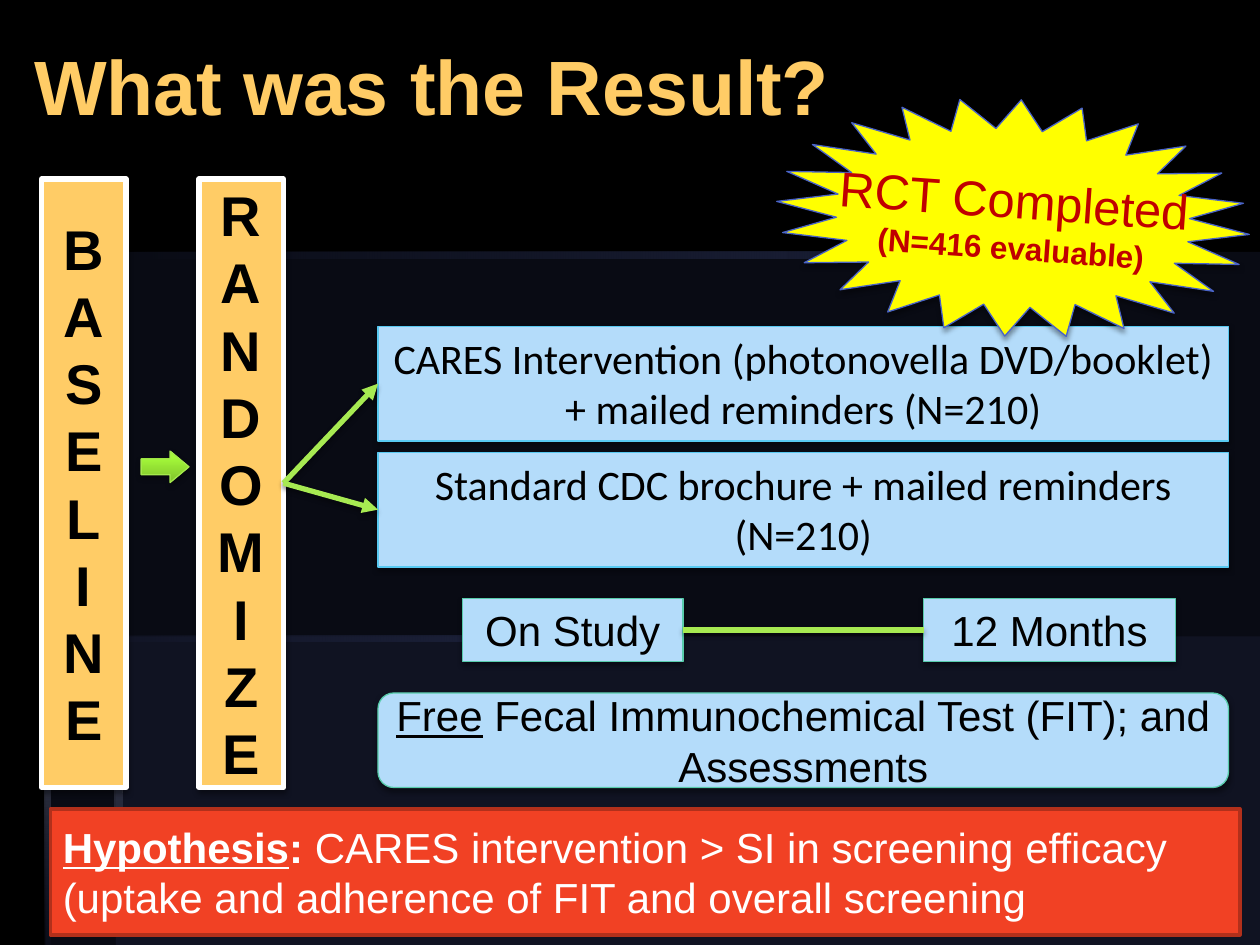
import pptx
import pptx.util
import pptx.dml.color
import pptx.enum.shapes
import pptx.enum.text
import pptx.oxml
import pptx.oxml.ns
from lxml import etree

Inches, Pt = pptx.util.Inches, pptx.util.Pt
Kind = pptx.enum.shapes.MSO_SHAPE
Align, Anchor = pptx.enum.text.PP_ALIGN, pptx.enum.text.MSO_ANCHOR
qn = pptx.oxml.ns.qn

GOLD, PALE, LIME, NAVY = "FFCC66", "B4DCFA", "A7EA52", "212745"
MINT, SKY, BLACK, WHITE = "58CCAC", "58C9F1", "000000", "FFFFFF"


def tint(fill, shade):
    fill.solid()
    fill.fore_color.rgb = pptx.dml.color.RGBColor.from_string(shade)


def box(kind, at, fill, edge, width, paras, size=24, ink=BLACK, font="Arial", bold=False):
    """Add a filled shape; each paragraph is a list of run texts."""
    shape = shapes.add_shape(kind, *map(Inches, at))
    shape.shadow.inherit = False
    tint(shape.fill, fill)
    tint(shape.line.fill, edge)
    shape.line.width = Pt(width)
    frame = shape.text_frame
    frame.word_wrap = True
    frame.vertical_anchor = Anchor.MIDDLE
    for i, texts in enumerate(paras):
        para = frame.paragraphs[0] if i == 0 else frame.add_paragraph()
        para.alignment = Align.CENTER
        for text in texts:
            run = para.add_run()
            run.text = text
            run.font.name, run.font.size, run.font.bold = font, Pt(size), bold
            tint(run.font.fill, ink)
    return shape


deck = pptx.Presentation()
deck.slide_width, deck.slide_height = Inches(10), Inches(7.5)
slide = deck.slides.add_slide(deck.slide_layouts[5])
shapes = slide.shapes
tint(slide.background.fill, BLACK)

# Background panels and edge bands: points, (colour, opacity %) stops, angle
glow = [(NAVY, 0), ("1E243F", 100)]
panel = [(NAVY, 30)]
bands = [
    ([(0.92, 5.05), (0.92, 7.5), (10, 7.5), (10, 5.05)], panel, 0),
    ([(0.94, 5.06), (0.36, 5.06), (0.36, 7.5), (10, 7.5), (10, 2), (0.94, 2)], panel, 0),
    ([(0.92, 2), (0.92, 2.05), (8.91, 2.05), (8.91, 2)], glow, 0),
    ([(0.91, 7.5), (0.97, 7.5), (0.96, 5.08), (0.91, 5.04)],
     [("696A75", 100), (NAVY, 0)], 270),
    ([(0.35, 5.04), (0.35, 5.09), (5.35, 5.09), (5.35, 5.04)], glow, 0),
    ([(0.35, 5.04), (0.35, 7.5), (0.4, 7.5), (0.4, 5.09)],
     [("696A75", 100), (NAVY, 10)], 270),
]
for points, stops, angle in bands:
    spots = [(Inches(x), Inches(y)) for x, y in points]
    pen = shapes.build_freeform(*spots[0])
    pen.add_line_segments(spots[1:], close=True)
    band = pen.convert_to_shape()
    band.shadow.inherit = False
    band.line.fill.background()
    if len(stops) == 1:
        tint(band.fill, stops[0][0])
    else:
        band.fill.gradient()
        band.fill.gradient_angle = angle
        for stop, (shade, _) in zip(band.fill.gradient_stops, stops):
            stop.color.rgb = pptx.dml.color.RGBColor.from_string(shade)
    for mark, (_, alpha) in zip(band._element.spPr.iter(qn("a:srgbClr")), stops):
        etree.SubElement(mark, qn("a:alpha")).set("val", str(alpha * 1000))

# Study flow
free = box(Kind.ROUNDED_RECTANGLE, (3, 5.5, 6.75, 0.75), PALE, MINT, 0.75,
           [["Free", " Fecal Immunochemical Test (FIT); and Assessments"]])
free.text_frame.paragraphs[0].runs[0].font.underline = True
base, random = [
    box(Kind.RECTANGLE, (x, 1.42, 0.67, 4.83), GOLD, WHITE, 3, list(word), 32, bold=True)
    for x, word in ((0.33, "BASELINE"), (1.58, "RANDOMIZE"))]
arms = [
    box(Kind.RECTANGLE, (3, y, 6.75, 0.91), PALE, SKY, 0.75, [[text]], font="Calibri")
    for y, text in (
        (2.59, "CARES Intervention (photonovella DVD/booklet) + mailed reminders (N=210)"),
        (3.59, "Standard CDC brochure + mailed reminders (N=210)"))]
for arm in arms:
    arm.text_frame.vertical_anchor = Anchor.TOP
start, end = [
    box(Kind.RECTANGLE, (x, 4.75, wide, 0.5), PALE, MINT, 0.75, [[text]])
    for x, wide, text in ((3.67, 1.75, "On Study"), (7.33, 2, "12 Months"))]

arrow = box(Kind.RIGHT_ARROW, (1.12, 3.58, 0.38, 0.25), LIME, "A4E94C", 0.75, [])
arrow.adjustments[1] = 0.6
arrow.fill.gradient()
arrow.fill.gradient_angle = 90
for stop, shade, place in zip(arrow.fill.gradient_stops, ("7FC02C", "A4F939"), (0, 0.8)):
    stop.color.rgb = pptx.dml.color.RGBColor.from_string(shade)
    stop.position = place

# Hypothesis
claim = box(Kind.RECTANGLE, (0.4, 6.42, 9.44, 1), "F14124", "B2301B", 2,
            [["Hypothesis", ": ", "CARES intervention > SI in screening efficacy "
              "(uptake and adherence of FIT and overall screening"]], ink=WHITE)
para = claim.text_frame.paragraphs[0]
para.alignment = Align.LEFT
para.runs[0].font.underline = True
for run in para.runs[:2]:
    run.font.bold = True

# Connectors
links = []
for a, b, head in ((start, end, False), (random, arms[0], True), (random, arms[1], True)):
    link = shapes.add_connector(pptx.enum.shapes.MSO_CONNECTOR.STRAIGHT, 0, 0, 0, 0)
    link.begin_connect(a, 3)
    link.end_connect(b, 1)
    tint(link.line.fill, LIME)
    link.line.width = Pt(3)
    if head:
        etree.SubElement(link.line._get_or_add_ln(), qn("a:tailEnd")).set("type", "triangle")
    links.append(link)

# Result burst
burst = box(Kind.STAR_24_POINT, (6.16, 0.79, 3.76, 1.88), "FFFF00", "4963C7", 0.75,
            [["RCT Completed"], ["(N=416 evaluable)"]], 28, "C00000")
burst.adjustments[0] = 0.375
burst.rotation = 4
burst.text_frame.word_wrap = False
note = burst.text_frame.paragraphs[1].runs[0].font
note.size, note.bold = Pt(18), True

# Soft shadows below the flow
for item in [free, base, random, *arms, start, end, arrow, *links, burst]:
    props = item._element.spPr
    for old in props.findall(qn("a:effectLst")):
        props.remove(old)
    props.append(pptx.oxml.parse_xml(
        '<a:effectLst xmlns:a="http://schemas.openxmlformats.org/drawingml/2006/main">'
        '<a:outerShdw blurRad="39000" dist="21000" dir="5400000" rotWithShape="0">'
        '<a:srgbClr val="000000"><a:alpha val="38000"/></a:srgbClr>'
        '</a:outerShdw></a:effectLst>'))

# Title
title = shapes.title
title.left, title.top, title.width, title.height = map(Inches, (0.17, 0.17, 7.88, 1))
title.text_frame.text = "What was the Result?"
title.text_frame.vertical_anchor = Anchor.MIDDLE
para = title.text_frame.paragraphs[0]
para.alignment = Align.LEFT
font = para.runs[0].font
font.name, font.size, font.bold = "Arial", Pt(44), True
tint(font.fill, GOLD)

deck.save("out.pptx")
